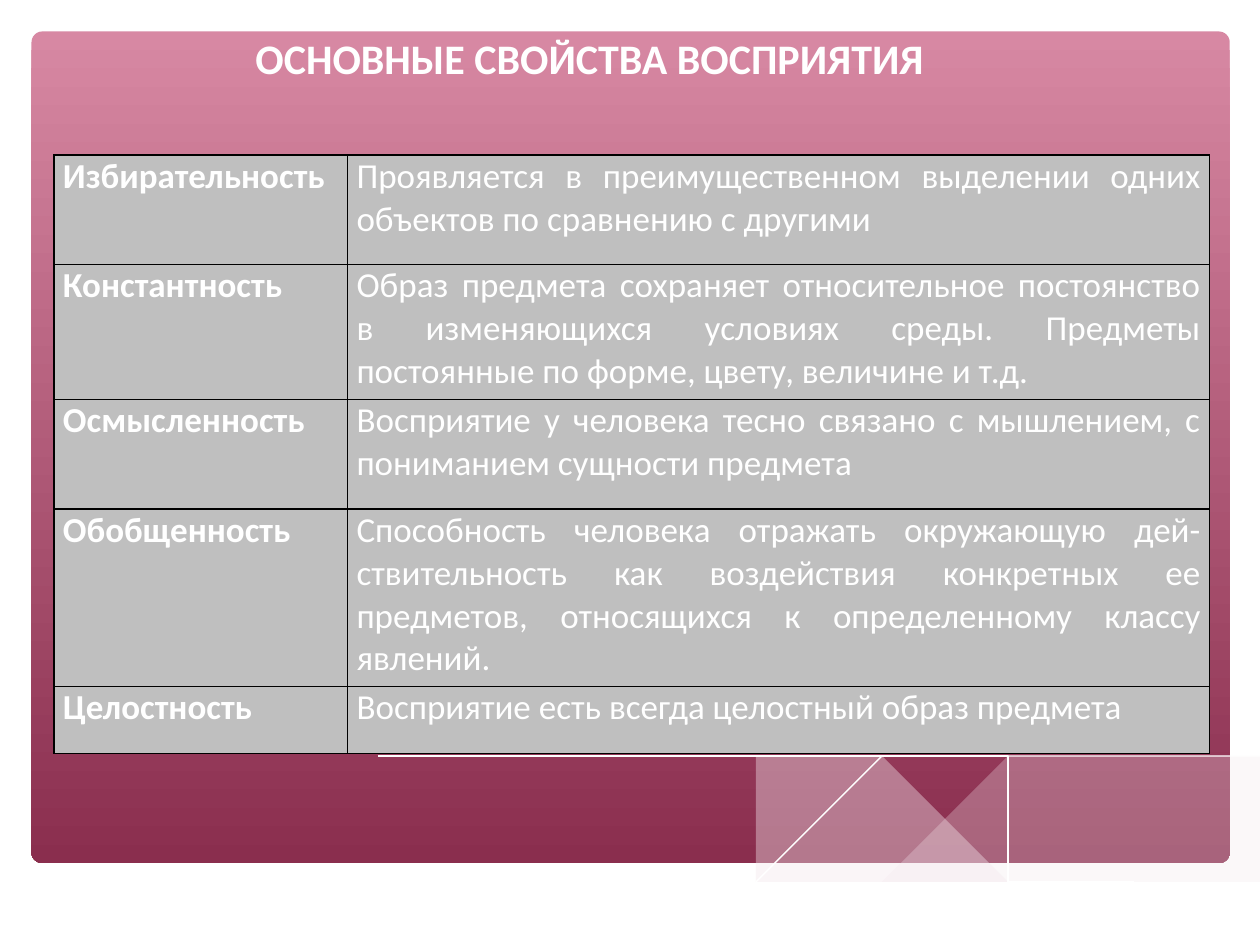
"""Build a slide with a table of the main properties of perception."""
from dataclasses import dataclass

from lxml import etree
from pptx import Presentation
from pptx.dml.color import RGBColor
from pptx.enum.shapes import MSO_SHAPE
from pptx.enum.text import MSO_ANCHOR, PP_ALIGN
from pptx.oxml.ns import qn
from pptx.util import Inches, Pt

ROUNDED_RECTANGLE = MSO_SHAPE.ROUNDED_RECTANGLE
TOP = MSO_ANCHOR.TOP
CENTER, JUSTIFY = PP_ALIGN.CENTER, PP_ALIGN.JUSTIFY

TITLE = "ОСНОВНЫЕ СВОЙСТВА ВОСПРИЯТИЯ"
PROPERTIES = [
    ("Избирательность", "Проявляется в преимущественном выделении одних объектов "
     "по сравнению с другими", 0.87),
    ("Константность", "Образ предмета сохраняет относительное постоянство в изменяющихся "
     "условиях среды. Предметы постоянные по форме, цвету, величине и т.д.", 1.07),
    ("Осмысленность", "Восприятие у человека тесно связано с мышлением, "
     "с пониманием сущности предмета", 0.87),
    ("Обобщенность", "Способность человека отражать окружающую дей-ствительность как "
     "воздействия конкретных ее предметов, относящихся к определенному классу явлений.", 1.41),
    ("Целостность", "Восприятие есть всегда целостный образ предмета", 0.53),
]
COLUMN_WIDTHS = (2.33, 6.84)

RIGHT_WAVE = [
    (9.77, 6.01), (9.49, 6.06), (9.21, 6.11), (8.92, 6.18), (8.61, 6.25), (8.06, 6.38),
    (7.54, 6.5), (7.07, 6.59), (6.62, 6.67), (6.92, 6.71), (7.19, 6.74), (7.45, 6.76),
    (7.7, 6.78), (7.93, 6.79), (8.25, 6.79), (8.55, 6.77), (8.81, 6.75), (9.06, 6.7),
    (9.29, 6.65), (9.5, 6.59), (9.77, 6.49),
]
LEFT_WAVE = [
    (8.94, 6.74), (8.67, 6.71), (8.38, 6.67), (8.08, 6.62), (7.76, 6.56), (7.42, 6.49),
    (7.07, 6.42), (6.69, 6.33), (6.3, 6.23), (5.99, 6.16), (5.69, 6.1), (5.42, 6.05),
    (5.15, 6), (4.89, 5.96), (4.65, 5.93), (4.2, 5.89), (3.8, 5.88), (3.45, 5.88),
    (3.14, 5.9), (2.87, 5.93), (3.23, 5.98), (3.63, 6.05), (4.05, 6.13), (4.5, 6.23),
    (4.91, 6.33), (5.3, 6.42), (5.67, 6.5), (6.02, 6.57), (6.35, 6.63), (6.66, 6.68),
    (6.95, 6.72), (7.23, 6.75), (7.49, 6.77), (7.74, 6.79), (7.97, 6.8), (8.39, 6.8),
    (8.58, 6.78), (8.76, 6.76),
]
FALLING_CURVE = [
    (3.1, 5.97), (3.29, 5.94), (3.53, 5.91), (3.88, 5.89), (4.17, 5.89), (4.5, 5.89),
    (4.89, 5.92), (5.33, 5.96), (5.82, 6.02), (6.09, 6.05), (6.36, 6.1), (6.65, 6.15),
    (6.96, 6.21), (7.28, 6.28), (7.61, 6.35), (7.96, 6.43), (8.32, 6.52), (8.69, 6.62),
    (9.08, 6.73),
]
RISING_CURVE = [
    (6.14, 6.58), (6.53, 6.48), (6.96, 6.37), (7.48, 6.24), (7.77, 6.18), (8.07, 6.12),
    (8.37, 6.06), (8.67, 6), (8.96, 5.96), (9.25, 5.92), (9.51, 5.89), (9.76, 5.87),
]
WAVES = [(RIGHT_WAVE, 29), (LEFT_WAVE, 40)]
CURVES = [FALLING_CURVE, RISING_CURVE]


@dataclass(frozen=True)
class Theme:
    """Colours and type sizes of the slide."""
    font: str = "Calibri"
    title_size: int = 24
    body_size: int = 20
    text: str = "FFFFFF"
    panel_top: str = "D788A3"
    panel_bottom: str = "8A2E4E"
    wave: str = "F4E7ED"
    curve: str = "FFFFFF"
    cell: str = "BFBFBF"
    border: str = "000000"


THEME = Theme()


def rgb(value):
    """Return the colour for a hex string."""
    return RGBColor.from_string(value)


def write(text_frame, text, size, bold, alignment):
    """Put one styled paragraph into a text frame."""
    paragraph = text_frame.paragraphs[0]
    paragraph.text = text
    paragraph.alignment = alignment
    font = paragraph.font
    font.name, font.size, font.bold = THEME.font, Pt(size), bold
    font.color.rgb = rgb(THEME.text)


def add_panel(slide):
    """Add the rounded gradient panel."""
    panel = slide.shapes.add_shape(
        ROUNDED_RECTANGLE, Inches(0.25), Inches(0.25), Inches(9.51), Inches(6.6))
    panel.adjustments[0] = 0.013
    panel.shadow.inherit = False
    panel.line.fill.background()
    panel.fill.gradient()
    panel.fill.gradient_angle = 270
    colors = (THEME.panel_top, THEME.panel_bottom)
    for stop, position, color in zip(panel.fill.gradient_stops, (0, 1), colors):
        stop.position = position
        stop.color.rgb = rgb(color)


def add_outline(slide, points, closed):
    """Add a freeform through points given in inches."""
    builder = slide.shapes.build_freeform(*points[0], scale=Inches(1))
    builder.add_line_segments(points[1:], close=closed)
    shape = builder.convert_to_shape()
    shape.shadow.inherit = False
    return shape


def add_wave(slide, points, opacity):
    """Add a translucent wave."""
    wave = add_outline(slide, points, True)
    wave.line.fill.background()
    wave.fill.solid()
    wave.fill.fore_color.rgb = rgb(THEME.wave)
    color = wave.fill._xPr.find(f"{qn('a:solidFill')}/{qn('a:srgbClr')}")
    etree.SubElement(color, qn("a:alpha"), val=str(opacity * 1000))


def add_curve(slide, points):
    """Add a thin open curve."""
    curve = add_outline(slide, points, False)
    curve.fill.background()
    curve.line.color.rgb = rgb(THEME.curve)
    curve.line.width = Pt(0.75)


def add_title(slide):
    """Add the slide title."""
    title = slide.shapes.add_textbox(Inches(0.43), Inches(0.21), Inches(8.5), Inches(0.63))
    title.text_frame.word_wrap = True
    title.text_frame.vertical_anchor = TOP
    write(title.text_frame, TITLE, THEME.title_size, True, CENTER)


def style_cell(cell):
    """Set the borders, fill and margins of a cell."""
    properties = cell._tc.get_or_add_tcPr()
    for side in ("a:lnL", "a:lnR", "a:lnT", "a:lnB"):
        border = etree.SubElement(properties, qn(side), w=str(Pt(1)))
        fill = etree.SubElement(border, qn("a:solidFill"))
        etree.SubElement(fill, qn("a:srgbClr"), val=THEME.border)
    cell.fill.solid()
    cell.fill.fore_color.rgb = rgb(THEME.cell)
    cell.margin_left = cell.margin_right = Inches(0.07)
    cell.margin_top = cell.margin_bottom = 0


def add_properties_table(slide):
    """Add the table of properties and their descriptions."""
    heights = [height for _, _, height in PROPERTIES]
    table = slide.shapes.add_table(
        len(PROPERTIES), len(COLUMN_WIDTHS), Inches(0.43), Inches(1.23),
        Inches(sum(COLUMN_WIDTHS)), Inches(sum(heights))).table
    table.first_row = table.horz_banding = False
    for column, width in zip(table.columns, COLUMN_WIDTHS):
        column.width = Inches(width)
    for row, (name, description, height) in zip(table.rows, PROPERTIES):
        row.height = Inches(height)
        for cell, text, bold in zip(row.cells, (name, description), (True, False)):
            style_cell(cell)
            write(cell.text_frame, text, THEME.body_size, bold, JUSTIFY)


def main():
    """Build and save the presentation."""
    presentation = Presentation()
    presentation.slide_width, presentation.slide_height = Inches(10), Inches(7.5)
    slide = presentation.slides.add_slide(presentation.slide_layouts[6])
    add_panel(slide)
    for points, opacity in WAVES:
        add_wave(slide, points, opacity)
    for points in CURVES:
        add_curve(slide, points)
    add_title(slide)
    add_properties_table(slide)
    presentation.save("out.pptx")


if __name__ == "__main__":
    main()
